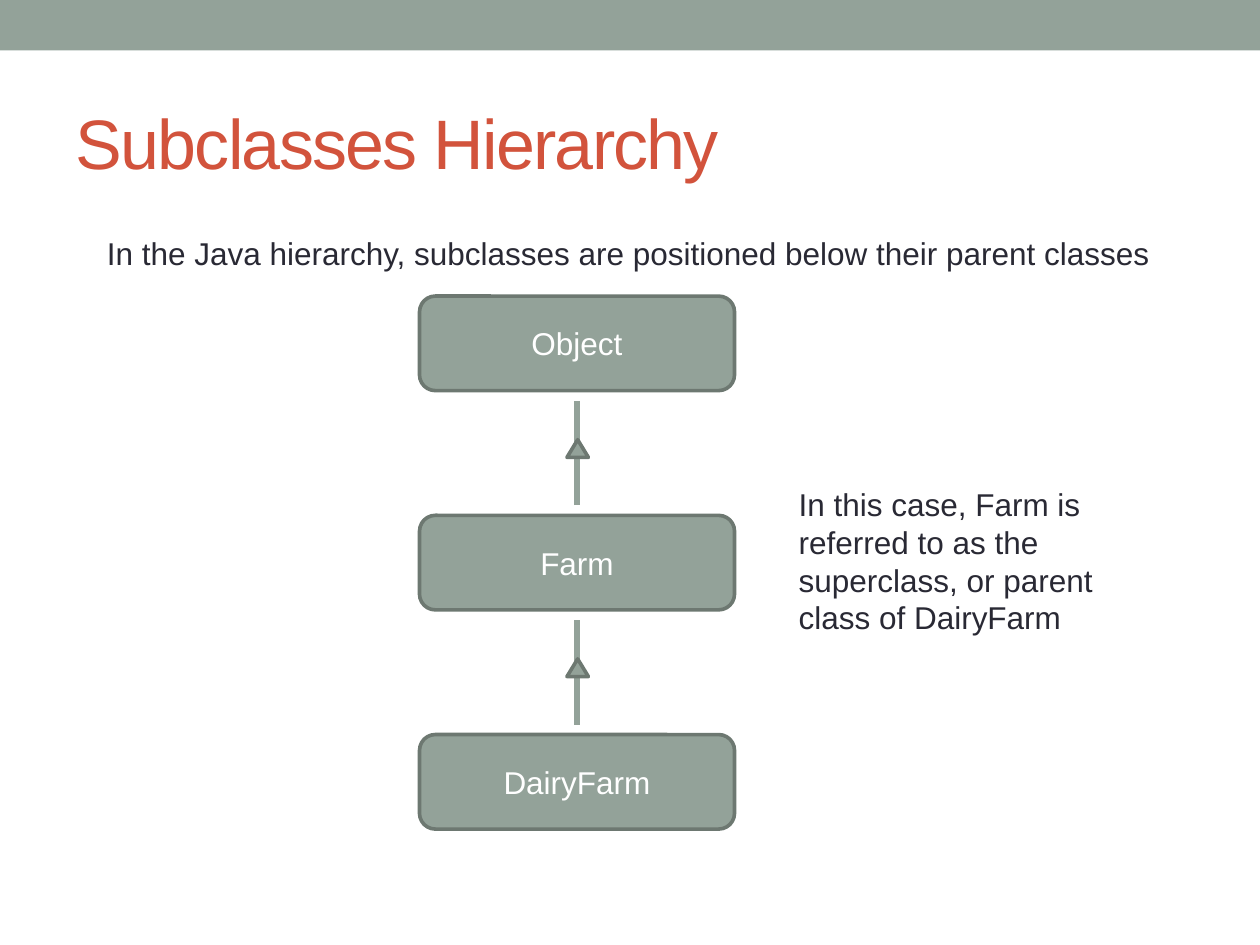
"""Build the slide on the subclass hierarchy."""
import dataclasses

import pptx
import pptx.dml.color
import pptx.enum.shapes
import pptx.enum.text
import pptx.oxml
import pptx.oxml.ns
import pptx.util

Inches = pptx.util.Inches
Pt = pptx.util.Pt
Shapes = pptx.enum.shapes.MSO_SHAPE
Anchor = pptx.enum.text.MSO_ANCHOR
Align = pptx.enum.text.PP_ALIGN


def rgb(code):
    return pptx.dml.color.RGBColor.from_string(code)


@dataclasses.dataclass(frozen=True)
class Theme:
    font: str = "Arial"
    sage: str = "93A299"
    outline: str = "6D7871"
    accent: str = "D2533C"
    ink: str = "292934"
    white: str = "FFFFFF"
    title_size: float = 40
    text_size: float = 18
    outline_width: float = 2.08
    link_width: float = 3.25


class HierarchySlide:
    def __init__(self, slide, theme):
        self.slide = slide
        self.theme = theme

    def set_words(self, frame, words, color, size, align=Align.LEFT, anchor=Anchor.TOP):
        for key, value in {"word_wrap": True, "vertical_anchor": anchor}.items():
            setattr(frame, key, value)
        paragraph = frame.paragraphs[0]
        paragraph.alignment = align
        run = paragraph.add_run()
        run.text = words
        formats = {"name": self.theme.font, "size": Pt(size)}
        for key, value in formats.items():
            setattr(run.font, key, value)
        run.font.color.rgb = rgb(color)
        return run

    def title(self, words, left, top, width, height):
        heading = self.slide.shapes.title
        place = {"left": left, "top": top, "width": width, "height": height}
        for key, value in place.items():
            setattr(heading, key, Inches(value))
        run = self.set_words(heading.text_frame, words, self.theme.accent,
                             self.theme.title_size, anchor=Anchor.MIDDLE)
        run.font._element.set("spc", "-100")

    def text(self, words, left, top, width, height, anchor=Anchor.TOP):
        note = self.slide.shapes.add_textbox(*map(Inches, (left, top, width, height)))
        self.set_words(note.text_frame, words, self.theme.ink, self.theme.text_size,
                       anchor=anchor)

    def shape(self, preset, left, top, width, height, outlined=True):
        figure = self.slide.shapes.add_shape(preset, *map(Inches, (left, top, width, height)))
        figure.shadow.inherit = False
        figure.fill.solid()
        figure.fill.fore_color.rgb = rgb(self.theme.sage)
        if outlined:
            figure.line.color.rgb = rgb(self.theme.outline)
            figure.line.width = Pt(self.theme.outline_width)
        else:
            figure.line.fill.background()
        return figure

    def class_box(self, name, left, top, width, height):
        box = self.shape(Shapes.ROUNDED_RECTANGLE, left, top, width, height)
        self.set_words(box.text_frame, name, self.theme.white, self.theme.text_size,
                       Align.CENTER, Anchor.MIDDLE)

    def inheritance(self, center, top, bottom):
        link = self.slide.shapes.add_connector(
            pptx.enum.shapes.MSO_CONNECTOR.STRAIGHT,
            *map(Inches, (center, bottom, center, top)))
        link.line.color.rgb = rgb(self.theme.sage)
        link.line.width = Pt(self.theme.link_width)
        effects = pptx.oxml.parse_xml(f"<a:effectLst {pptx.oxml.ns.nsdecls('a')}/>")
        link._element.spPr.append(effects)
        self.shape(Shapes.ISOSCELES_TRIANGLE, center - 0.08, top + 0.31, 0.17, 0.14)


def main():
    deck = pptx.Presentation()
    deck.slide_width, deck.slide_height = Inches(10), Inches(7.5)
    page = HierarchySlide(deck.slides.add_slide(deck.slide_layouts[5]), Theme())

    page.shape(Shapes.RECTANGLE, 0, 0, 10, 0.4, outlined=False)
    page.title("Subclasses Hierarchy", 0.5, 0.58, 9, 1.08)
    page.text("In the Java hierarchy, subclasses are positioned below their parent classes",
              0.75, 1.5, 8.5, 0.71, Anchor.BOTTOM)
    page.text("In this case, Farm is referred to as the superclass, or parent class of DairyFarm",
              6.24, 3.8, 3, 1.31)

    classes = ("Object", "Farm", "DairyFarm")
    left, first_top, width, height, pitch, gap = 3.33, 2.35, 2.5, 0.75, 1.74, 0.08
    for level, name in enumerate(classes):
        top = first_top + level * pitch
        page.class_box(name, left, top, width, height)
        if level:
            page.inheritance(left + width / 2, top - pitch + height + gap, top - gap)

    deck.save("out.pptx")


if __name__ == "__main__":
    main()
